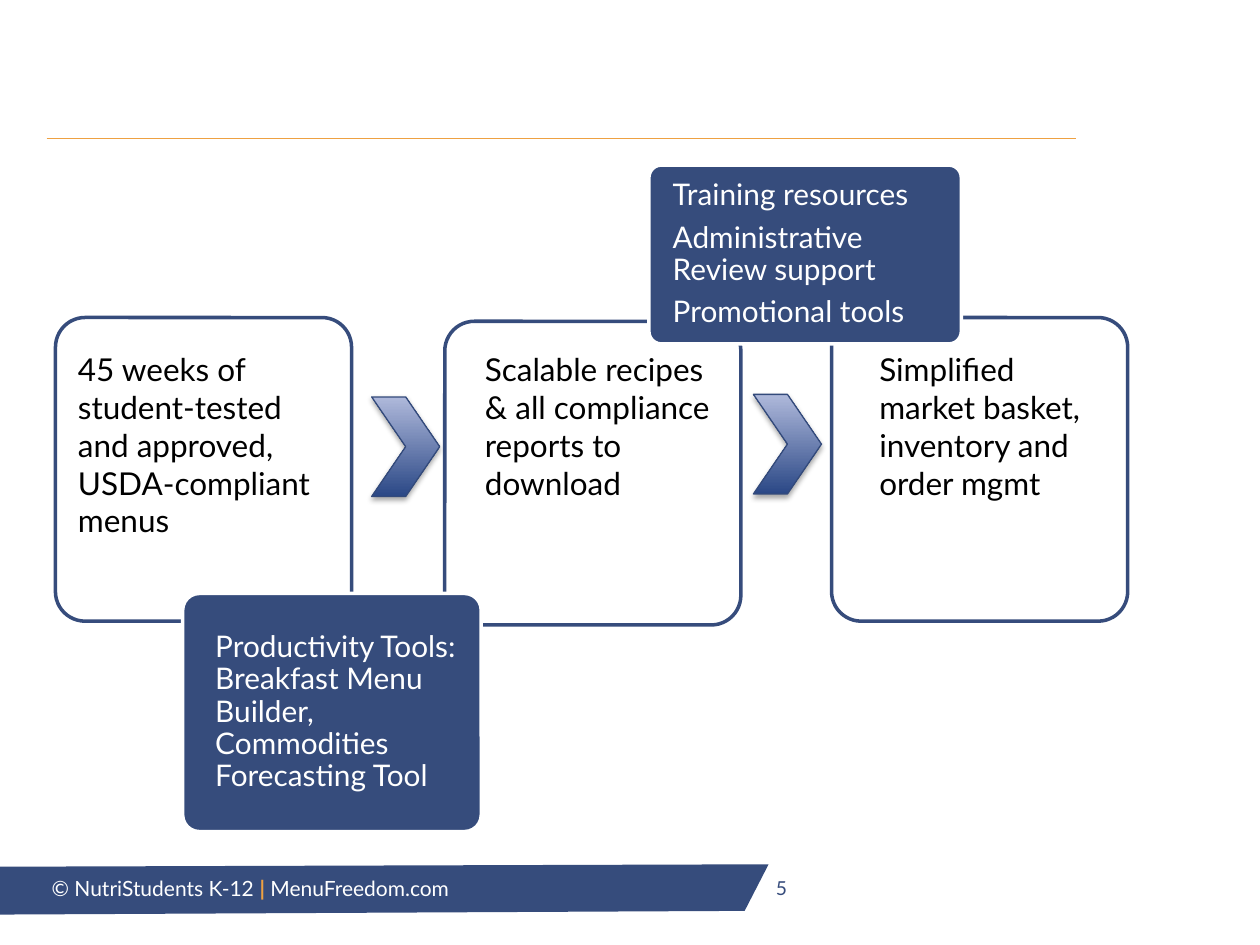
import pptx
import pptx.dml.color
import pptx.enum.shapes
import pptx.enum.text
import pptx.oxml
import pptx.oxml.ns
import pptx.util
from lxml import etree

Inches = pptx.util.Inches
Pt = pptx.util.Pt
RGBColor = pptx.dml.color.RGBColor
Preset = pptx.enum.shapes.MSO_SHAPE
Anchor = pptx.enum.text.MSO_ANCHOR
qn = pptx.oxml.ns.qn

NAVY = RGBColor(0x36, 0x4C, 0x7C)
ORANGE = RGBColor(0xEE, 0xA1, 0x42)
WHITE = RGBColor(0xFF, 0xFF, 0xFF)
BLACK = RGBColor(0, 0, 0)
CHEVRON_DARK = RGBColor(0x2B, 0x48, 0x86)
CHEVRON_LIGHT = RGBColor(0xAF, 0xB9, 0xDB)
CHEVRON_LINE = RGBColor(0x33, 0x4A, 0x7B)
FONT = "Lato"

CARD_WIDTH, CARD_HEIGHT = 2.35, 2.41
CARD_TEXT_TOP = 2.73

# left, top, text left, text width, paragraphs
CARDS = [
    (0.44, 2.52, 0.52, 2.18,
     ["45 weeks of student-tested and approved, USDA-compliant menus"]),
    (3.53, 2.55, 3.75, 2.02,
     ["Scalable recipes", "& all compliance reports to download"]),
    (6.6, 2.52, 6.88, 1.95,
     ["Simplified market basket, inventory and order mgmt"]),
]


def write_text(shape, paragraphs, size, color, margins=(0.1, 0.05, 0.1, 0.05),
               anchor=Anchor.TOP, indent=0, line_spacing=None, space_after=None):
    """Fill a shape; a paragraph is a string or a list of (text, color, bold)."""
    frame = shape.text_frame
    frame.word_wrap = True
    frame.vertical_anchor = anchor
    (frame.margin_left, frame.margin_top,
     frame.margin_right, frame.margin_bottom) = map(Inches, margins)
    for index, content in enumerate(paragraphs):
        paragraph = frame.add_paragraph() if index else frame.paragraphs[0]
        paragraph.alignment = pptx.enum.text.PP_ALIGN.LEFT
        paragraph.line_spacing = line_spacing
        paragraph.space_after = space_after
        if indent:
            paragraph._p.get_or_add_pPr().set("marL", str(Inches(indent)))
        runs = [(content, color, False)] if isinstance(content, str) else content
        for text, run_color, bold in runs:
            run = paragraph.add_run()
            run.text = text
            run.font.name = FONT
            run.font.size = Pt(size)
            run.font.bold = bold
            run.font.color.rgb = run_color


def add_text(slide, left, top, width, height, paragraphs, **text_format):
    box = slide.shapes.add_textbox(*map(Inches, (left, top, width, height)))
    write_text(box, paragraphs, **text_format)


def add_preset(slide, preset, left, top, width, height, line, line_width, fill=None):
    shape = slide.shapes.add_shape(preset, *map(Inches, (left, top, width, height)))
    shape.shadow.inherit = False
    if fill is not None:
        shape.fill.solid()
        shape.fill.fore_color.rgb = fill
    shape.line.color.rgb = line
    shape.line.width = Pt(line_width)
    return shape


def add_card(slide, left, top, text_left, text_width, paragraphs):
    card = add_preset(slide, Preset.ROUNDED_RECTANGLE, left, top,
                      CARD_WIDTH, CARD_HEIGHT, NAVY, 2, WHITE)
    card.adjustments[0] = 0.1
    color = card._element.spPr.find(qn("a:solidFill"))[0]
    etree.SubElement(color, qn("a:alpha"), val="90000")
    add_text(slide, text_left, CARD_TEXT_TOP, text_width, 1.88, paragraphs,
             size=18, color=BLACK)


def add_callout(slide, left, top, width, height, paragraphs, indent):
    callout = add_preset(slide, Preset.ROUNDED_RECTANGLE, left, top,
                         width, height, WHITE, 2, NAVY)
    callout.adjustments[0] = 0.07
    write_text(callout, paragraphs, 17, WHITE, margins=(0.04, 0.02, 0.04, 0.02),
               anchor=Anchor.MIDDLE, indent=indent, line_spacing=0.9,
               space_after=Pt(6))


def add_chevron(slide, left, top):
    chevron = add_preset(slide, Preset.CHEVRON, left, top, 0.54, 0.79,
                         CHEVRON_LINE, 0.75)
    chevron.fill.gradient()
    chevron.fill.gradient_angle = 90
    for stop, color in zip(chevron.fill.gradient_stops, (CHEVRON_DARK, CHEVRON_LIGHT)):
        stop.color.rgb = color
    effects = chevron._element.spPr.find(qn("a:effectLst"))
    shadow = etree.SubElement(effects, qn("a:outerShdw"), blurRad="40000",
                              dist="23000", dir="5400000", rotWithShape="0")
    color = etree.SubElement(shadow, qn("a:srgbClr"), val="000000")
    etree.SubElement(color, qn("a:alpha"), val="35000")


def add_header_rule(slide, left, top, width):
    rule = slide.shapes.add_connector(
        pptx.enum.shapes.MSO_CONNECTOR.STRAIGHT,
        *map(Inches, (left, top, left + width, top)))
    rule.line.color.rgb = ORANGE
    rule.line.width = Pt(0.75)
    etree.SubElement(rule._element.spPr, qn("a:effectLst"))


def add_footer(slide, left, top):
    corners = [(6.29, 0), (0.03, 0.02), (0, 0.4), (6.1, 0.37)]
    points = [(Inches(left + x), Inches(top + y)) for x, y in corners]
    builder = slide.shapes.build_freeform(*points[0])
    builder.add_line_segments(points[1:], close=True)
    band = builder.convert_to_shape()
    band.shadow.inherit = False
    band.fill.solid()
    band.fill.fore_color.rgb = NAVY
    band.line.fill.background()
    add_text(slide, left + 0.56, top + 0.04, 5.49, 0.4,
             [[("© NutriStudents K-12 ", WHITE, False), ("|", ORANGE, True),
               (" MenuFreedom.com", WHITE, False)]],
             size=12, color=WHITE, margins=(0.04, 0.05, 0.1, 0.05))
    add_text(slide, left + 6.25, top - 0.01, 0.49, 0.4, ["5"],
             size=11, color=NAVY, anchor=Anchor.MIDDLE)


def main():
    presentation = pptx.Presentation()
    presentation.slide_width = Inches(10)
    presentation.slide_height = Inches(7.5)
    slide = presentation.slides.add_slide(presentation.slide_layouts[6])

    add_footer(slide, -0.19, 6.86)
    add_header_rule(slide, 0.37, 1.1, 8.17)
    for card in CARDS:
        add_card(slide, *card)
    add_callout(slide, 5.15, 1.31, 2.48, 1.42,
                ["Training resources", "Administrative Review support",
                 "Promotional tools"], indent=0.12)
    add_callout(slide, 1.45, 4.71, 2.37, 1.89,
                ["Productivity Tools: Breakfast Menu Builder, "
                 "Commodities Forecasting Tool"], indent=0.18)
    add_chevron(slide, 2.95, 3.15)
    add_chevron(slide, 5.98, 3.13)
    presentation.save("out.pptx")


if __name__ == "__main__":
    main()
